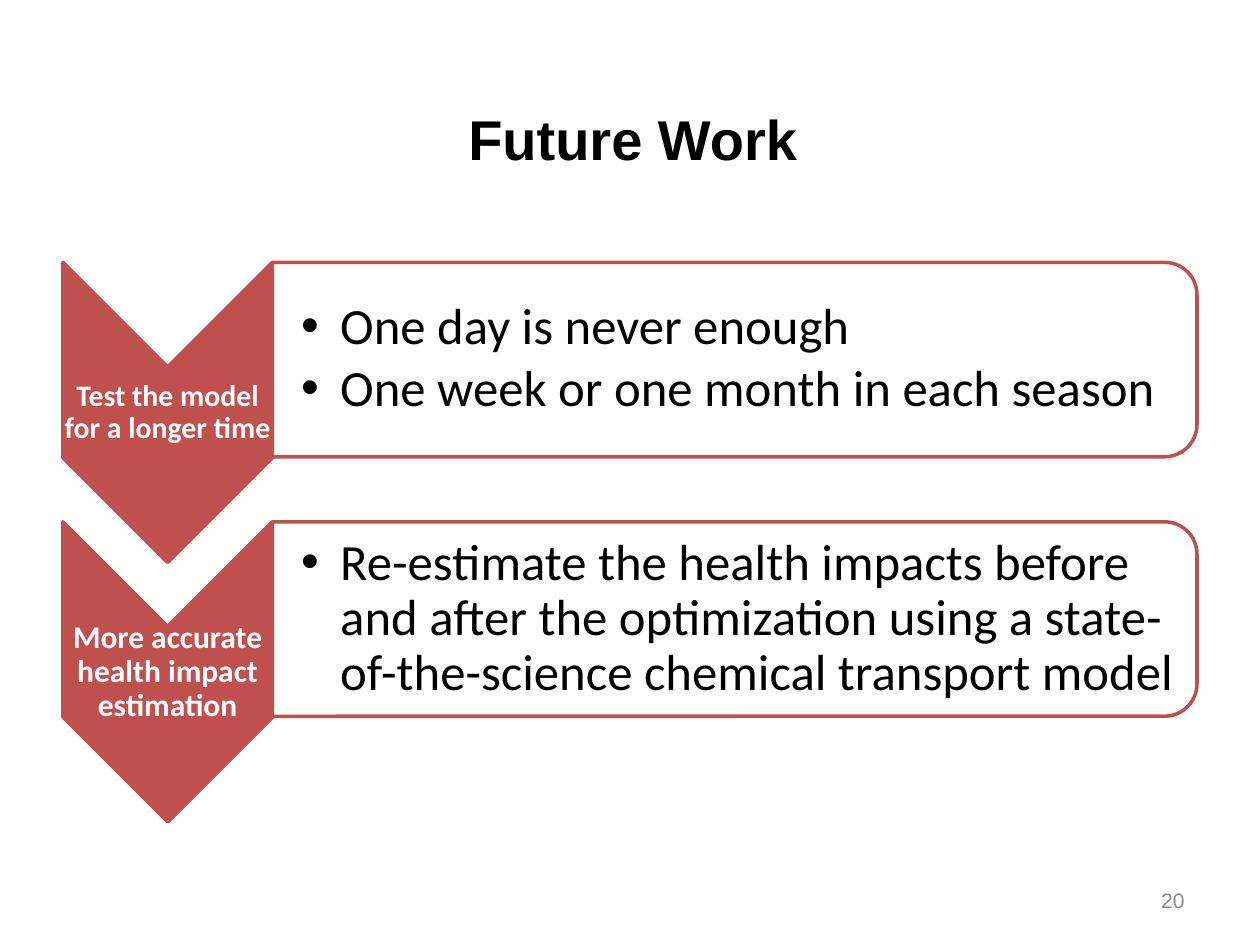
from lxml.etree import SubElement as Sub
from pptx import Presentation
from pptx.dml.color import RGBColor as Rgb
from pptx.enum.shapes import MSO_SHAPE as Kind
from pptx.enum.text import MSO_ANCHOR as Anchor, PP_ALIGN as Align
from pptx.oxml.ns import qn
from pptx.util import Cm, Pt

RED = Rgb(0xC0, 0x50, 0x4D)
WHITE = Rgb(0xFF, 0xFF, 0xFF)
BLACK = Rgb(0, 0, 0)
GRAY = Rgb(0x8C, 0x8C, 0x8C)

TOP, STEP = 5.29, 5.23
ROWS = [
    ("Test the model for a longer time", 17,
     ["One day is never enough", "One week or one month in each season"]),
    ("More accurate health impact estimation", 18,
     ["Re-estimate the health impacts before and after the optimization "
      "using a state-of-the-science chemical transport model"]),
]


def add_turned(slide, kind, left, top, width, height, fill):
    shift = (width - height) / 2
    shape = slide.shapes.add_shape(
        kind, Cm(left + shift), Cm(top - shift), Cm(height), Cm(width))
    shape.rotation = 90
    shape.shadow.inherit = False
    shape.fill.solid()
    shape.fill.fore_color.rgb = fill
    shape.line.color.rgb = RED
    shape.line.width = Pt(2)
    return shape


def set_alpha(shape, share):
    color = next(shape.fill._xPr.iter(qn("a:srgbClr")))
    Sub(color, qn("a:alpha")).set("val", str(share * 1000))


def add_bullet(para):
    props = para._p.get_or_add_pPr()
    props.set("marL", str(Cm(0.79)))
    props.set("indent", str(-Cm(0.79)))
    Sub(props, qn("a:buFont")).set("typeface", "Arial")
    Sub(props, qn("a:buChar")).set("char", "•")


def add_text(slide, box, lines, size, color, font="Arial", bold=False,
             align=Align.LEFT, pads=(0.25, 0.13), space=None, after=0,
             bullet=False):
    frame = slide.shapes.add_textbox(*map(Cm, box)).text_frame
    frame.word_wrap = True
    frame.vertical_anchor = Anchor.MIDDLE
    first, rest = pads
    frame.margin_left = Cm(first)
    frame.margin_right = frame.margin_top = frame.margin_bottom = Cm(rest)
    frame.text = "\n".join(lines)
    for para in frame.paragraphs:
        if bullet:
            add_bullet(para)
        para.alignment = align
        para.line_spacing = space
        para.space_after = Pt(after)
        para.font.name = font
        para.font.size = Pt(size)
        para.font.bold = bold
        para.font.color.rgb = color


def add_row(slide, top, label, size, points):
    add_turned(slide, Kind.CHEVRON, 1.27, top, 4.22, 6.05, RED)
    add_text(slide, (1.27, top + 2.13, 4.22, 1.8), [label], size, WHITE,
             "Calibri", True, Align.CENTER, (0.03, 0.03), 0.9)
    panel = add_turned(slide, Kind.ROUND_2_SAME_RECTANGLE,
                       5.49, top, 18.64, 3.92, WHITE)
    set_alpha(panel, 90)
    add_text(slide, (5.49, top + 0.19, 18.44, 3.53), points, 29, BLACK,
             "Calibri", pads=(0.58, 0.05), space=0.9, after=4, bullet=True)


def main():
    deck = Presentation()
    deck.slide_width, deck.slide_height = Cm(25.4), Cm(19.05)
    slide = deck.slides.add_slide(deck.slide_layouts[6])
    add_text(slide, (1.27, 1.3, 22.86, 2.97), ["Future Work"], 32, BLACK,
             bold=True, align=Align.CENTER)
    add_text(slide, (18.2, 17.65, 5.93, 1.01), ["20"], 12, GRAY,
             align=Align.RIGHT, pads=(0.25, 0.25))
    for index, row in enumerate(ROWS):
        add_row(slide, TOP + index * STEP, *row)
    deck.save("out.pptx")


if __name__ == "__main__":
    main()
